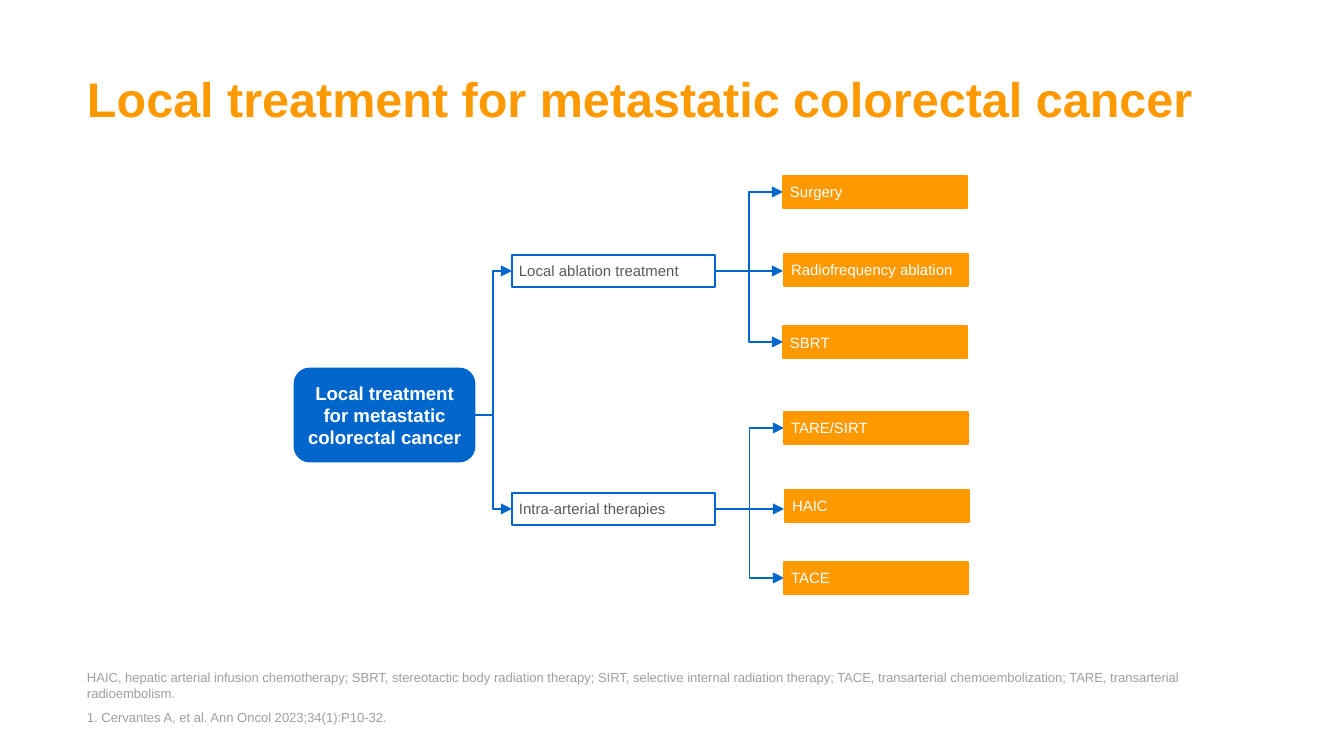
from lxml.etree import SubElement
from pptx import Presentation
from pptx.dml.color import RGBColor
from pptx.enum.shapes import MSO_CONNECTOR, MSO_SHAPE
from pptx.enum.text import MSO_ANCHOR, MSO_AUTO_SIZE, PP_ALIGN
from pptx.oxml.ns import qn
from pptx.util import Emu, Pt

SCALE = 914400 / 134.4
HUES = {"orange": "FF9900", "blue": "0066CC", "white": "FFFFFF",
        "text": "58595B", "note": "9E9FA2"}
TITLE = "Local treatment for metastatic colorectal cancer"
NOTES = ("HAIC, hepatic arterial infusion chemotherapy; SBRT, stereotactic body "
         "radiation therapy; SIRT, selective internal radiation therapy; TACE, "
         "transarterial chemoembolization; TARE, transarterial radioembolism.")
SOURCE = "1. Cervantes A, et al. Ann Oncol 2023;34(1):P10-32."
GROUPS = [
    ((512, 176, 455, 182), "Local ablation treatment", 79,
     ["Surgery", "Radiofrequency ablation", "SBRT"]),
    ((512, 412, 456, 182), "Intra-arterial therapies", 81,
     ["TARE/SIRT", "HAIC", "TACE"]),
]
STEPS = [(0, 0), (1, 78), (0, 150)]
NODE_W, LEAF_W, ROW_H = 203, 184, 32


def px(n):
    """Turn pixels into EMU."""
    return Emu(round(n * SCALE))


def hue(name):
    """Look up a colour by name."""
    return RGBColor.from_string(HUES[name])


def place(shape, box):
    """Move a shape to a pixel box."""
    shape.left, shape.top, shape.width, shape.height = map(px, box)


def write(shape, text, size, color, bold=False, pad=0,
          anchor=MSO_ANCHOR.MIDDLE, align=PP_ALIGN.LEFT):
    """Fill a shape with one formatted run and return its paragraph."""
    frame = shape.text_frame
    frame.word_wrap = True
    frame.auto_size = MSO_AUTO_SIZE.NONE
    frame.vertical_anchor = anchor
    frame.margin_left = frame.margin_right = px(pad)
    frame.margin_top = frame.margin_bottom = px(pad)
    para = frame.paragraphs[0]
    para.alignment = align
    para.space_before = Pt(0)
    run = para.add_run()
    run.text = text
    font = run.font
    font.name, font.size, font.bold = "Arial", Pt(size), bold
    font.color.rgb = hue(color)
    return para


def draw_box(slide, box, fill, edge, width=1, kind=MSO_SHAPE.RECTANGLE):
    """Draw a flat box with an edge and an optional fill."""
    shape = slide.shapes.add_shape(kind, *map(px, box))
    shape.shadow.inherit = False
    if fill:
        shape.fill.solid()
        shape.fill.fore_color.rgb = hue(fill)
    else:
        shape.fill.background()
    shape.line.color.rgb = hue(edge)
    shape.line.width = Pt(width)
    return shape


def draw_arrow(slide, start, end):
    """Draw an arrow that bends halfway when its ends differ in height."""
    kind = MSO_CONNECTOR.STRAIGHT if start[1] == end[1] else MSO_CONNECTOR.ELBOW
    arrow = slide.shapes.add_connector(kind, *map(px, start + end))
    arrow.line.color.rgb = hue("blue")
    arrow.line.width = Pt(1)
    SubElement(arrow.line._get_or_add_ln(), qn("a:tailEnd"), type="triangle")
    SubElement(arrow._element.spPr, qn("a:effectLst"))


def draw_title(slide, box):
    """Set the slide title."""
    title = slide.shapes.title
    place(title, box)
    para = write(title, TITLE, 26, "orange", True, anchor=MSO_ANCHOR.BOTTOM)
    para.line_spacing = 0.75


def draw_notes(slide, box):
    """Set the abbreviations and the source line below them."""
    left, top, width, height = box
    body = slide.placeholders[1]
    place(body, (left, top, width - 34, 44))
    para = write(body, NOTES, 7, "note", anchor=MSO_ANCHOR.BOTTOM)
    para.space_after = Pt(3)
    props = para._p.get_or_add_pPr()
    props.set("marL", "0")
    props.set("indent", "0")
    SubElement(props, qn("a:buNone"))
    cite = slide.shapes.add_textbox(*map(px, (left, top + 53, width, height - 53)))
    write(cite, SOURCE, 7, "note", anchor=MSO_ANCHOR.TOP)


def draw_root(slide, box):
    """Draw the root box and return the middle of its right side."""
    left, top, width, height = box
    root = draw_box(slide, box, "blue", "blue", 1.5, MSO_SHAPE.ROUNDED_RECTANGLE)
    root.adjustments[0] = 0.16
    write(root, TITLE, 10, "white", True, 8, align=PP_ALIGN.CENTER)
    return left + width, top + height // 2


def draw_group(slide, box, label, drop, leaves, root):
    """Draw a branch with its leaves, joined to the root."""
    left, top, width, _ = box
    mid = top + drop + ROW_H // 2
    node = draw_box(slide, (left, top + drop, NODE_W, ROW_H), None, "blue")
    write(node, label, 8, "text", pad=7)
    draw_arrow(slide, root, (left, mid))
    edge = left + width - LEAF_W
    for index, (text, (shift, step)) in enumerate(zip(leaves, STEPS)):
        goal = mid if index == 1 else top + step + ROW_H // 2
        draw_arrow(slide, (left + NODE_W, mid), (edge, goal))
        leaf = draw_box(slide, (edge + shift, top + step, LEAF_W, ROW_H),
                        "orange", "orange")
        write(leaf, text, 8, "white", pad=7).space_after = Pt(2)


def main():
    """Build and save the slide."""
    deck = Presentation()
    deck.slide_width, deck.slide_height = px(1344), px(756)
    slide = deck.slides.add_slide(deck.slide_layouts[1])
    draw_title(slide, (87, 40, 1172, 86))
    draw_notes(slide, (87, 657, 1172, 95))
    root = draw_root(slide, (295, 369, 179, 92))
    for group in GROUPS:
        draw_group(slide, *group, root)
    deck.save("out.pptx")


if __name__ == "__main__":
    main()
